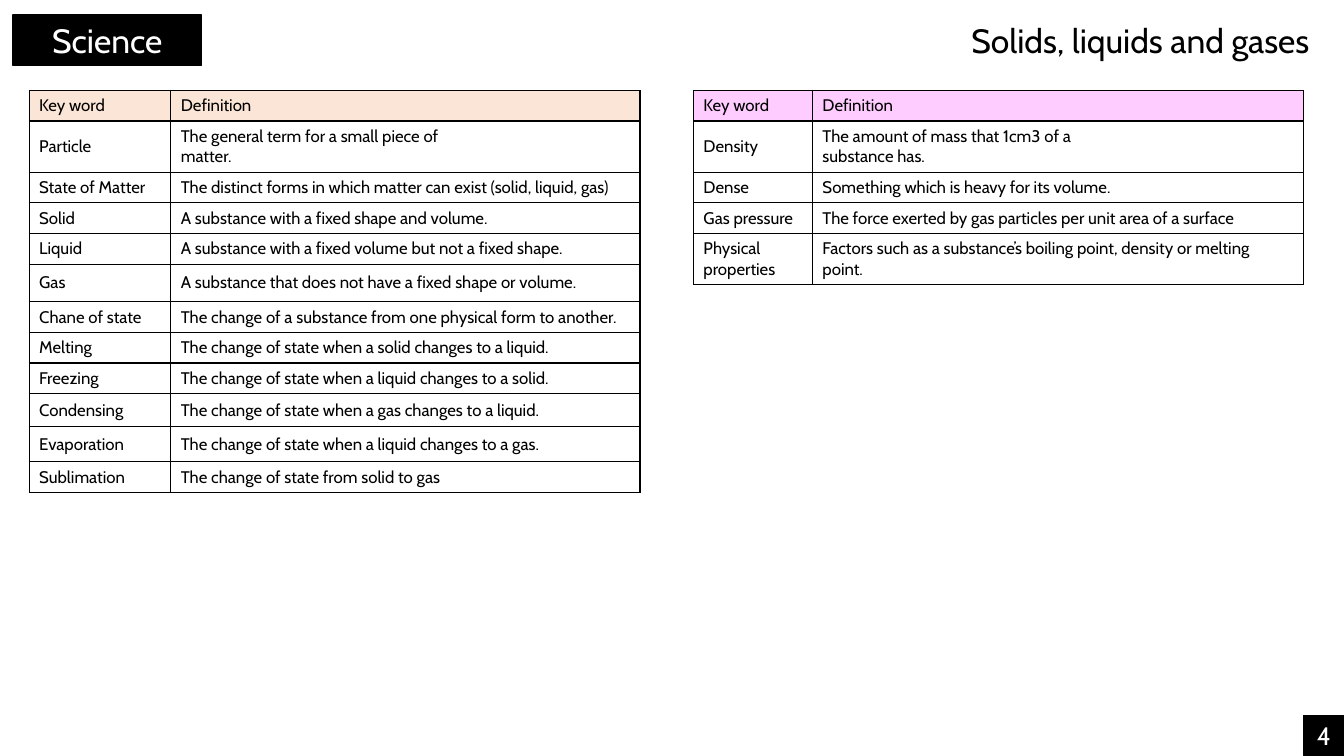
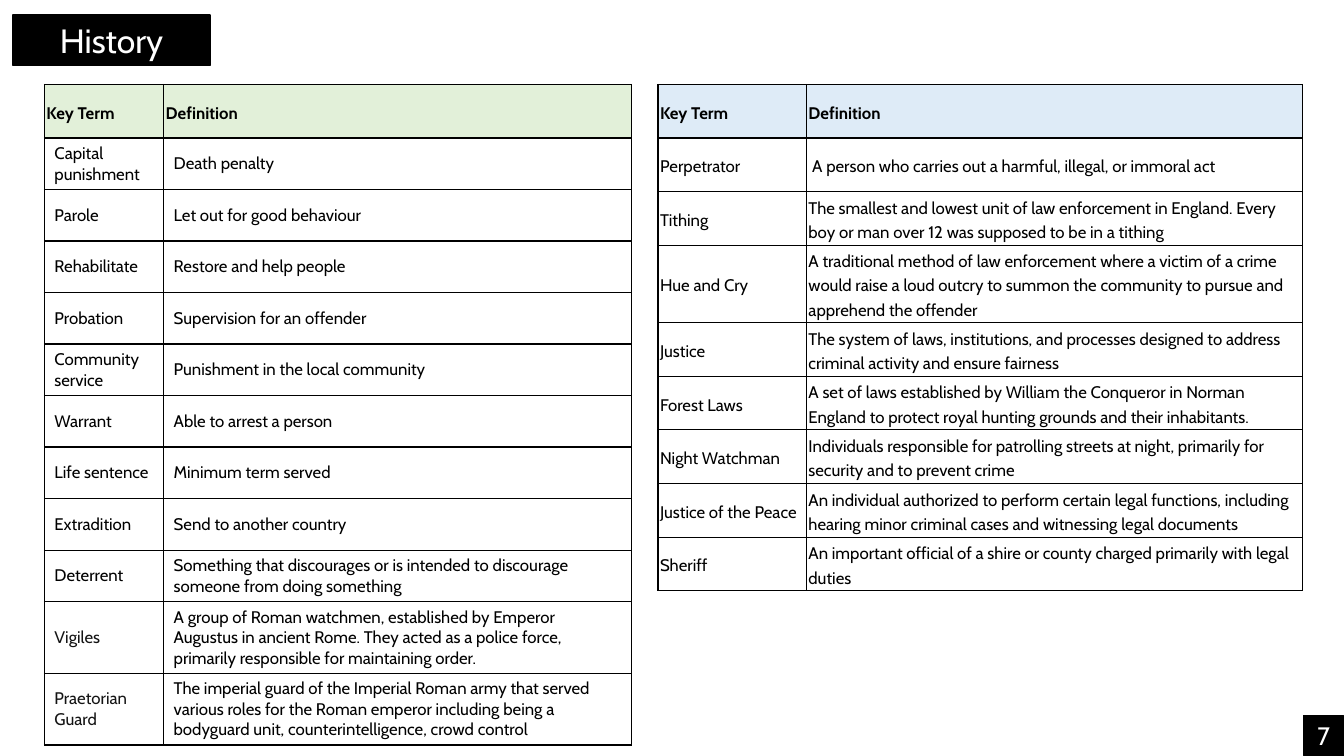
from dataclasses import dataclass, field

import pptx
import pptx.dml.color
import pptx.enum.shapes
import pptx.enum.text
import pptx.oxml
import pptx.oxml.ns
import pptx.presentation
import pptx.shapes.base
import pptx.slide
import pptx.table
import pptx.text.text
import pptx.util

Pt = pptx.util.Pt
RGBColor = pptx.dml.color.RGBColor
Align = pptx.enum.text.PP_ALIGN

FONT = "Cabin"
BLACK = RGBColor(0x00, 0x00, 0x00)
WHITE = RGBColor(0xFF, 0xFF, 0xFF)
CHARCOAL = RGBColor(0x14, 0x14, 0x14)
PEACH = RGBColor(0xFB, 0xE5, 0xD6)
PINK = RGBColor(0xFF, 0xCC, 0xFF)
BLUE = RGBColor(0xDE, 0xEB, 0xF7)
GREEN = RGBColor(0xE2, 0xF0, 0xD9)

SLIDE_WIDTH, SLIDE_HEIGHT = 960, 540
BAND_TOP, BAND_HEIGHT = 10.8, 36
BADGE_SIZE = 28.8
TITLE_ONLY_LAYOUT = 5


@dataclass(frozen=True)
class CellStyle:
    margin_x: float = 7.2
    margin_y: float = 3.6
    line_spacing: float = 1.0
    space_after: float = 0
    bold: bool = False


PLAIN = CellStyle()
SPACED = CellStyle(1.5, 1.5, 1.19, 6)
SPACED_BOLD = CellStyle(1.5, 1.5, 1.19, 6, bold=True)


@dataclass(frozen=True)
class Entry:
    term: str
    definition: str
    height: float
    term_color: RGBColor = BLACK


@dataclass(frozen=True)
class Glossary:
    left: float
    top: float
    column_widths: tuple[float, float]
    header_fill: RGBColor
    entries: list[Entry]  # the first entry is the header
    header_style: CellStyle = PLAIN
    body_style: CellStyle = PLAIN


@dataclass(frozen=True)
class SubjectPage:
    subject: str
    band_width: float
    number: int
    topic: str = ""
    glossaries: list[Glossary] = field(default_factory=list)


LINE = 21.7
TWO_LINES = 36
HISTORY_ROW = 36.8
SPACED_ROW = 38.3
THREE_LINES = 51.1

MATTER = Glossary(20.8, 64.6, (101.2, 335.2), PEACH, [
    Entry("Key word", "Definition", LINE),
    Entry("Particle", "The general term for a small piece of\nmatter.", TWO_LINES),
    Entry("State of Matter", "The distinct forms in which matter can exist (solid, liquid, gas)", LINE),
    Entry("Solid", "A substance with a fixed shape and volume.", LINE),
    Entry("Liquid", "A substance with a fixed volume but not a fixed shape.", LINE),
    Entry("Gas", "A substance that does not have a fixed shape or volume.", 26.8),
    Entry("Chane of state", "The change of a substance from one physical form to another.", LINE),
    Entry("Melting", "The change of state when a solid changes to a liquid.", LINE),
    Entry("Freezing", "The change of state when a liquid changes to a solid.", 22),
    Entry("Condensing", "The change of state when a gas changes to a liquid.", 23.4),
    Entry("Evaporation", "The change of state when a liquid changes to a gas.", 25.2),
    Entry("Sublimation", "The change of state from solid to gas", LINE),
])

DENSITY = Glossary(495.3, 64.6, (85, 350.8), PINK, [
    Entry("Key word", "Definition", LINE),
    Entry("Density", "The amount of mass that 1cm3 of a\nsubstance has.", TWO_LINES),
    Entry("Dense", "Something which is heavy for its volume.", LINE),
    Entry("Gas pressure", "The force exerted by gas particles per unit area of a surface", LINE),
    Entry("Physical properties",
          "Factors such as a substance’s boiling point, density or melting point.", TWO_LINES),
])

LAW_ENFORCEMENT = Glossary(470, 60.3, (106, 354.2), BLUE, [
    Entry("Key Term", "Definition", SPACED_ROW),
    Entry("Perpetrator", " A person who carries out a harmful, illegal, or immoral act", SPACED_ROW),
    Entry("Tithing", "The smallest and lowest unit of law enforcement in England. "
          "Every boy or man over 12 was supposed to be in a tithing", SPACED_ROW),
    Entry("Hue and Cry", "A traditional method of law enforcement where a victim of a crime would "
          "raise a loud outcry to summon the community to pursue and apprehend the offender", 54.8),
    Entry("Justice", "The system of laws, institutions, and processes designed to address "
          "criminal activity and ensure fairness", SPACED_ROW),
    Entry("Forest Laws", "A set of laws established by William the Conqueror in Norman England "
          "to protect royal hunting grounds and their inhabitants.", SPACED_ROW),
    Entry("Night Watchman", "Individuals responsible for patrolling streets at night, primarily "
          "for security and to prevent crime", SPACED_ROW),
    Entry("Justice of the Peace", "An individual authorized to perform certain legal functions, "
          "including hearing minor criminal cases and witnessing legal documents", SPACED_ROW),
    Entry("Sheriff", "An important official of a shire or county charged primarily with "
          "legal duties", SPACED_ROW),
], SPACED_BOLD, SPACED)

PUNISHMENT = Glossary(31.7, 60.3, (85.2, 334.2), GREEN, [
    Entry("Key Term", "Definition", SPACED_ROW),
    Entry("Capital punishment", "Death penalty", HISTORY_ROW),
    Entry("Parole", "Let out for good behaviour", HISTORY_ROW),
    Entry("Rehabilitate", "Restore and help people", HISTORY_ROW),
    Entry("Probation", "Supervision for an offender", HISTORY_ROW),
    Entry("Community service", "Punishment in the local community", HISTORY_ROW),
    Entry("Warrant", "Able to arrest a person", HISTORY_ROW),
    Entry("Life sentence", "Minimum term served", HISTORY_ROW),
    Entry("Extradition", "Send to another country", HISTORY_ROW),
    Entry("Deterrent", "Something that discourages or is intended to discourage someone "
          "from doing something", HISTORY_ROW),
    Entry("Vigiles", "A group of Roman watchmen, established by Emperor Augustus in ancient Rome. "
          "They acted as a police force, primarily responsible for maintaining order.",
          THREE_LINES, CHARCOAL),
    Entry("Praetorian Guard", "The imperial guard of the Imperial Roman army that served various "
          "roles for the Roman emperor including being a bodyguard unit, counterintelligence, "
          "crowd control", THREE_LINES, CHARCOAL),
], SPACED_BOLD)

PAGES = [
    SubjectPage("Science", 134.6, 4, "Solids, liquids and gases", [MATTER, DENSITY]),
    SubjectPage("History", 140.8, 7, glossaries=[LAW_ENFORCEMENT, PUNISHMENT]),
]


def format_font(paragraph: pptx.text.text._Paragraph, size: float, color: RGBColor,
                bold: bool = False) -> None:
    font = paragraph.font
    font.name, font.size, font.bold = FONT, Pt(size), bold
    font.color.rgb = color


def write_line(shape: pptx.shapes.base.BaseShape, text: str, size: float,
               color: RGBColor, alignment: Align) -> None:
    frame = shape.text_frame
    frame.text = text
    frame.word_wrap = True
    frame.auto_size = pptx.enum.text.MSO_AUTO_SIZE.NONE
    frame.vertical_anchor = pptx.enum.text.MSO_ANCHOR.MIDDLE
    paragraph = frame.paragraphs[0]
    paragraph.alignment = alignment
    format_font(paragraph, size, color)


def paint_black(shape: pptx.shapes.base.BaseShape, line_width: float) -> None:
    shape.fill.solid()
    shape.fill.fore_color.rgb = BLACK
    shape.line.color.rgb = BLACK
    shape.line.width = Pt(line_width)


def add_subject_band(slide: pptx.slide.Slide, subject: str, width: float) -> None:
    band = slide.shapes.title
    band.left, band.top = Pt(9.3), Pt(BAND_TOP)
    band.width, band.height = Pt(width), Pt(BAND_HEIGHT)
    paint_black(band, 1)
    write_line(band, subject, 24, WHITE, Align.CENTER)


def add_topic(slide: pptx.slide.Slide, topic: str) -> None:
    box = slide.shapes.add_textbox(Pt(625.7), Pt(BAND_TOP), Pt(316.8), Pt(BAND_HEIGHT))
    write_line(box, topic, 24, BLACK, Align.RIGHT)


def add_page_badge(slide: pptx.slide.Slide, number: int) -> None:
    badge = slide.shapes.add_shape(
        pptx.enum.shapes.MSO_SHAPE.RECTANGLE,
        Pt(SLIDE_WIDTH - BADGE_SIZE), Pt(SLIDE_HEIGHT - BADGE_SIZE), Pt(BADGE_SIZE), Pt(BADGE_SIZE))
    badge.shadow.inherit = False
    paint_black(badge, 0.75)
    write_line(badge, str(number), 18, WHITE, Align.CENTER)


def add_borders(cell: pptx.table._Cell) -> None:
    """Draw 1 pt lines on all sides; call before filling, as the schema orders lines first."""
    properties = cell._tc.get_or_add_tcPr()
    for side in ("lnL", "lnR", "lnT", "lnB"):
        properties.append(pptx.oxml.parse_xml(
            f'<a:{side} {pptx.oxml.ns.nsdecls("a")} w="{Pt(1)}"><a:solidFill>'
            f'<a:srgbClr val="{BLACK}"/></a:solidFill></a:{side}>'))


def fill_cell(cell: pptx.table._Cell, text: str, style: CellStyle, color: RGBColor) -> None:
    cell.text = text
    cell.vertical_anchor = pptx.enum.text.MSO_ANCHOR.MIDDLE
    cell.margin_left = cell.margin_right = Pt(style.margin_x)
    cell.margin_top = cell.margin_bottom = Pt(style.margin_y)
    for paragraph in cell.text_frame.paragraphs:
        paragraph.line_spacing = style.line_spacing
        paragraph.space_after = Pt(style.space_after)
        format_font(paragraph, 12, color, style.bold)


def add_glossary(slide: pptx.slide.Slide, glossary: Glossary) -> None:
    entries = glossary.entries
    table = slide.shapes.add_table(
        len(entries), 2, Pt(glossary.left), Pt(glossary.top),
        Pt(sum(glossary.column_widths)), Pt(sum(entry.height for entry in entries))).table
    for column, width in zip(table.columns, glossary.column_widths):
        column.width = Pt(width)
    for index, entry in enumerate(entries):
        row = table.rows[index]
        row.height = Pt(entry.height)
        is_header = index == 0
        style = glossary.header_style if is_header else glossary.body_style
        fill_cell(row.cells[0], entry.term, style, entry.term_color)
        fill_cell(row.cells[1], entry.definition, style, BLACK)
        for cell in row.cells:
            add_borders(cell)
            if is_header:
                cell.fill.solid()
                cell.fill.fore_color.rgb = glossary.header_fill
            else:
                cell.fill.background()


def add_page(presentation: pptx.presentation.Presentation, page: SubjectPage) -> None:
    slide = presentation.slides.add_slide(presentation.slide_layouts[TITLE_ONLY_LAYOUT])
    add_subject_band(slide, page.subject, page.band_width)
    if page.topic:
        add_topic(slide, page.topic)
    for glossary in page.glossaries:
        add_glossary(slide, glossary)
    add_page_badge(slide, page.number)


def main() -> None:
    presentation = pptx.Presentation()
    presentation.slide_width = Pt(SLIDE_WIDTH)
    presentation.slide_height = Pt(SLIDE_HEIGHT)
    for page in PAGES:
        add_page(presentation, page)
    presentation.save("out.pptx")


if __name__ == "__main__":
    main()
